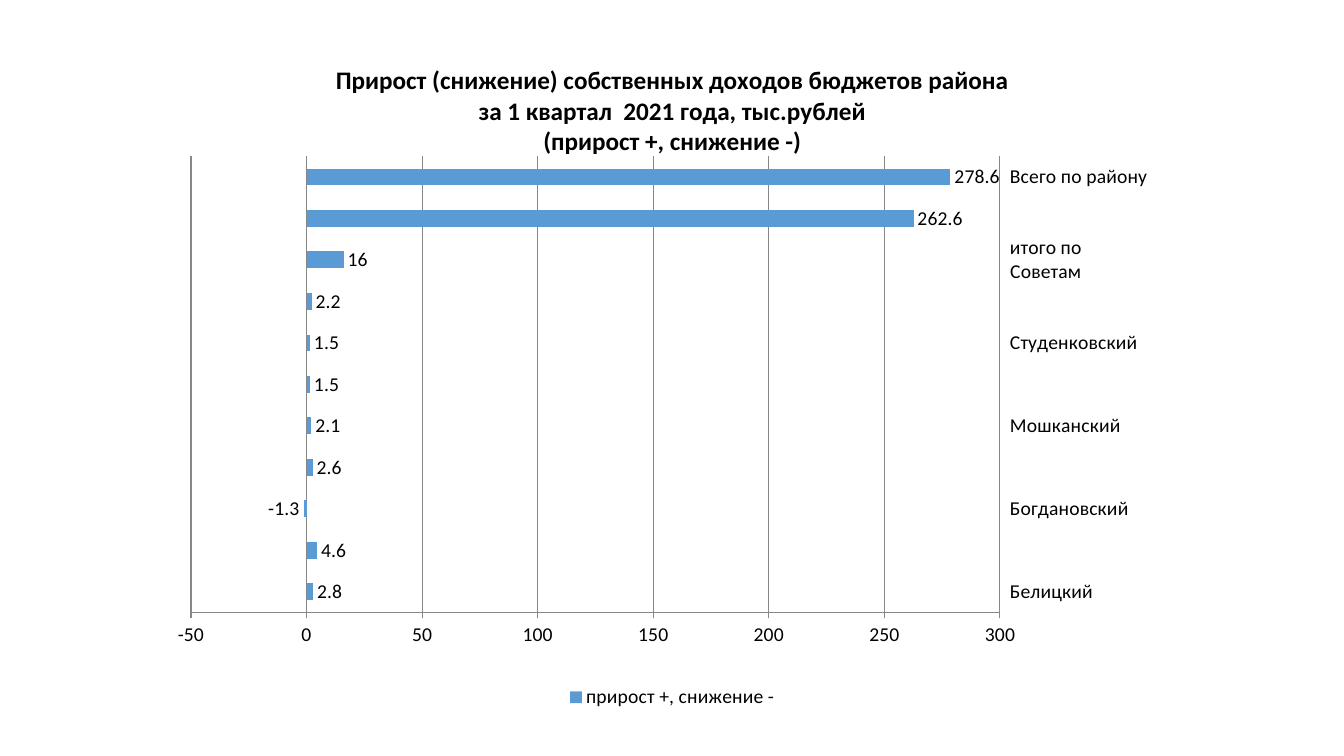
from lxml import etree
from pptx import Presentation
from pptx import util as u
from pptx.chart.data import CategoryChartData
from pptx.dml.color import RGBColor
from pptx.enum import chart as kinds
from pptx.oxml import parse_xml
from pptx.oxml.ns import nsdecls, qn

HEADING = (
    "Прирост (снижение) собственных доходов бюджетов района",
    "за 1 квартал  2021 года, тыс.рублей",
    "(прирост +, снижение -)",
)
GROWTH_NAME = "прирост +, снижение -"
GROWTH = {
    "Белицкий": 2.8,
    "Богушевский": 4.6,
    "Богдановский": -1.3,
    "Коковчинский": 2.6,
    "Мошканский": 2.1,
    "Немойтовский": 1.5,
    "Студенковский": 1.5,
    "Ходцевский": 2.2,
    "итого по Советам": 16,
    "районный бюджет": 262.6,
    "Всего по району": 278.6,
}
PLOT_BOX = {"x": 0.03, "y": 0.17, "w": 0.79, "h": 0.68}


def color(hex_code):
    """Turn a hex string into a colour."""
    return RGBColor.from_string(hex_code)


def apply(target, formats):
    """Set every attribute listed in formats on target."""
    for name, value in formats.items():
        setattr(target, name, value)


def style_font(font, size, bold=False):
    """Give a font the chart's typeface and black colour."""
    apply(font, {"name": "Calibri", "size": u.Pt(size), "bold": bold})
    font.color.rgb = color("000000")


def style_line(line):
    """Draw a thin grey axis or grid line."""
    line.color.rgb = color("878787")
    line.width = u.Pt(0.75)


def place_plot(chart, box):
    """Fix the inner plot area at fractions of the chart frame."""
    plot_area = chart.element.find(".//" + qn("c:plotArea"))
    for layout in plot_area.findall(qn("c:layout")):
        plot_area.remove(layout)
    layout = parse_xml(f"<c:layout {nsdecls('c')}><c:manualLayout/></c:layout>")
    settings = {"layoutTarget": "inner", "xMode": "edge", "yMode": "edge", **box}
    for tag, value in settings.items():
        etree.SubElement(layout[0], qn(f"c:{tag}")).set("val", str(value))
    plot_area.insert(0, layout)


def write_heading(chart):
    """Write the three-line chart title."""
    frame = chart.chart_title.text_frame
    for index, wording in enumerate(HEADING):
        line = frame.add_paragraph() if index else frame.paragraphs[0]
        run = line.add_run()
        run.text = wording
        style_font(run.font, 18, True)


def style_axes(chart):
    """Set district names at the right and the value scale below."""
    districts, amounts = chart.category_axis, chart.value_axis
    apply(districts, {
        "tick_label_position": kinds.XL_TICK_LABEL_POSITION.HIGH,
        "major_tick_mark": kinds.XL_TICK_MARK.NONE,
        "has_major_gridlines": False,
    })
    apply(amounts, {
        "minimum_scale": -50,
        "maximum_scale": 300,
        "major_unit": 50,
        "major_tick_mark": kinds.XL_TICK_MARK.OUTSIDE,
        "has_major_gridlines": True,
    })
    style_line(amounts.major_gridlines.format.line)
    for axis in (districts, amounts):
        style_font(axis.tick_labels.font, 14)
        style_line(axis.format.line)


def style_bars(chart):
    """Colour the bars and show their values."""
    plot = chart.plots[0]
    apply(plot, {"gap_width": 150, "vary_by_categories": False})
    growth = plot.series[0]
    growth.invert_if_negative = False
    growth.format.fill.solid()
    growth.format.fill.fore_color.rgb = color("5B9BD5")
    apply(growth.data_labels, {
        "show_value": True,
        "position": kinds.XL_LABEL_POSITION.OUTSIDE_END,
    })
    style_font(growth.data_labels.font, 14)


def add_growth_chart(slide, left, top, width, height):
    """Add the revenue growth bar chart in the given box."""
    data = CategoryChartData()
    data.categories = list(GROWTH)
    data.add_series(GROWTH_NAME, list(GROWTH.values()))
    box = [u.Pt(length) for length in (left, top, width, height)]
    chart = slide.shapes.add_chart(
        kinds.XL_CHART_TYPE.BAR_CLUSTERED, *box, data).chart
    style_font(chart.font, 10)
    apply(chart, {"has_title": True, "has_legend": True})
    apply(chart.legend, {
        "position": kinds.XL_LEGEND_POSITION.BOTTOM,
        "include_in_layout": False,
    })
    style_font(chart.legend.font, 14)
    write_heading(chart)
    style_axes(chart)
    style_bars(chart)
    place_plot(chart, PLOT_BOX)


def main():
    """Build and save the slide."""
    deck = Presentation()
    apply(deck, {"slide_width": u.Pt(960), "slide_height": u.Pt(540)})
    slide = deck.slides.add_slide(deck.slide_layouts[6])
    add_growth_chart(slide, 114.5, 30, 731.5, 479.5)
    deck.save("out.pptx")


if __name__ == "__main__":
    main()
